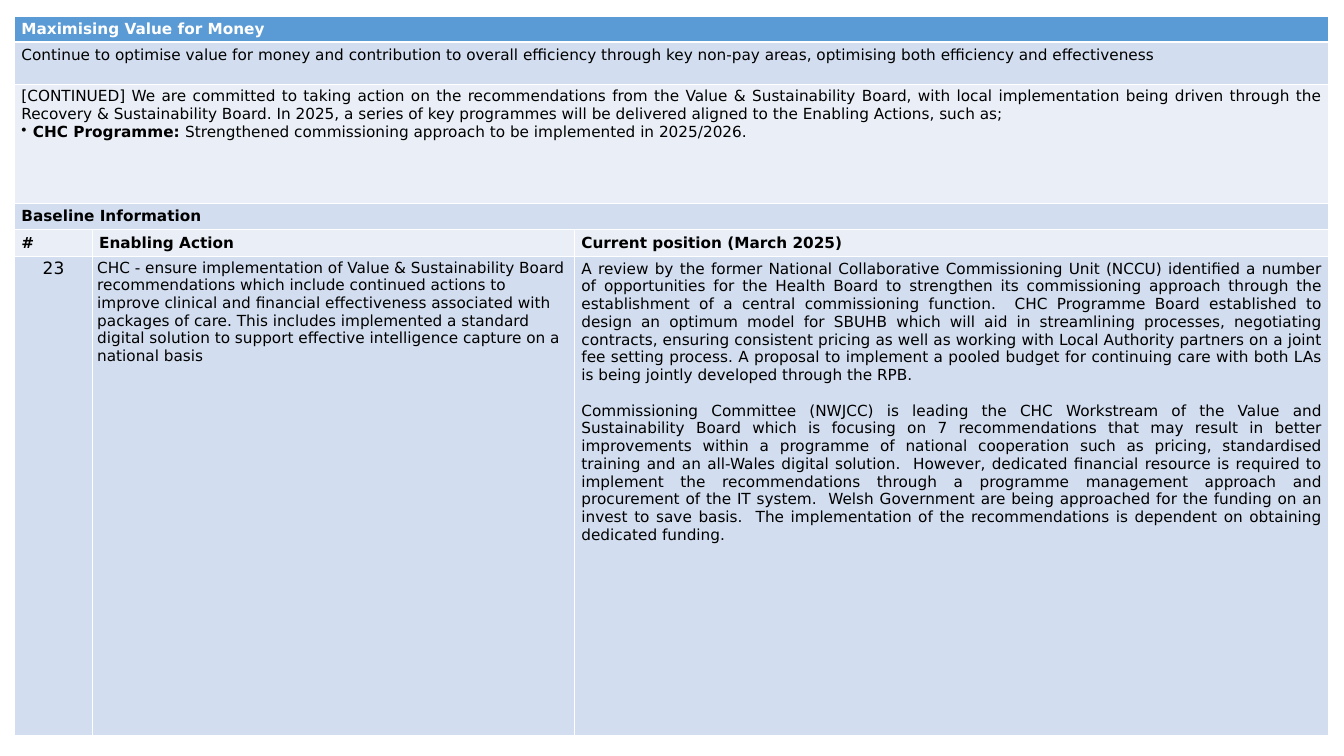
"""Builds the value for money slide, one table with a baseline section."""
from dataclasses import dataclass

import lxml.etree
import pptx
import pptx.dml.color
import pptx.enum.text
import pptx.oxml.ns
import pptx.table
import pptx.util

Cm = pptx.util.Cm
Pt = pptx.util.Pt
RGBColor = pptx.dml.color.RGBColor
ALIGN = pptx.enum.text.PP_ALIGN
ANCHOR = pptx.enum.text.MSO_ANCHOR

FONT = "DejaVu Sans"
WHITE = RGBColor(0xFF, 0xFF, 0xFF)
BLACK = RGBColor(0x00, 0x00, 0x00)
BLUE = RGBColor(0x5B, 0x9B, 0xD5)
MID = RGBColor(0xD2, 0xDE, 0xEF)
PALE = RGBColor(0xEA, 0xEF, 0xF7)

COLS = (3.23, 20.04, 31.34)
ROWS = (1.07, 1.73, 4.98, 1.07, 1.12, 19.89)
WIDE = (0.28, 0.15)
TIGHT = (0.2, 0.1)


@dataclass
class Para:
    text: str
    lead: str = ""
    align: ALIGN = ALIGN.JUSTIFY
    bold: bool = False
    size: int = 18
    gap: int = 0
    bullet: bool = False


@dataclass
class Box:
    paras: list[Para]
    fill: RGBColor
    ink: RGBColor = BLACK
    anchor: ANCHOR = ANCHOR.TOP
    inset: tuple[float, float] = WIDE


def label(text: str, fill: RGBColor, ink: RGBColor = BLACK) -> Box:
    return Box([Para(text, align=ALIGN.LEFT, bold=True)], fill, ink, ANCHOR.MIDDLE)


GRID = [
    [label("Maximising Value for Money", BLUE, WHITE)],
    [Box([Para("Continue to optimise value for money and contribution to overall efficiency "
               "through key non-pay areas, optimising both efficiency and effectiveness",
               align=ALIGN.LEFT)], MID)],
    [Box([Para("[CONTINUED] We are committed to taking action on the recommendations from the "
               "Value & Sustainability Board, with local implementation being driven through the "
               "Recovery & Sustainability Board. In 2025, a series of key programmes will be "
               "delivered aligned to the Enabling Actions, such as;"),
          Para("Strengthened commissioning approach to be implemented in 2025/2026.",
               lead="CHC Programme: ", align=ALIGN.LEFT, bullet=True)], PALE)],
    [label("Baseline Information", MID)],
    [label(text, PALE) for text in ("#", "Enabling Action", "Current position (March 2025)")],
    [Box([Para("23", align=ALIGN.CENTER, size=20)], MID, inset=TIGHT),
     Box([Para("CHC - ensure implementation of Value & Sustainability Board recommendations "
               "which include continued actions to improve clinical and financial effectiveness "
               "associated with packages of care. This includes implemented a standard digital "
               "solution to support effective intelligence capture on a national basis",
               align=ALIGN.LEFT)], MID, inset=TIGHT),
     Box([Para("A review by the former National Collaborative Commissioning Unit (NCCU) "
               "identified a number of opportunities for the Health Board to strengthen its "
               "commissioning approach through the establishment of a central commissioning "
               "function.  CHC Programme Board established to design an optimum model for SBUHB "
               "which will aid in streamlining processes, negotiating contracts, ensuring "
               "consistent pricing as well as working with Local Authority partners on a joint "
               "fee setting process. A proposal to implement a pooled budget for continuing care "
               "with both LAs is being jointly developed through the RPB."),
          Para("Commissioning Committee (NWJCC) is leading the CHC Workstream of the Value and "
               "Sustainability Board which is focusing on 7 recommendations that may result in "
               "better improvements within a programme of national cooperation such as pricing, "
               "standardised training and an all-Wales digital solution.  However, dedicated "
               "financial resource is required to implement the recommendations through a "
               "programme management approach and procurement of the IT system.  Welsh "
               "Government are being approached for the funding on an invest to save basis.  The "
               "implementation of the recommendations is dependent on obtaining dedicated "
               "funding.", gap=21)], MID)],
]


def add_node(root: lxml.etree._Element, tag: str, **attrs: str) -> lxml.etree._Element:
    return lxml.etree.SubElement(root, pptx.oxml.ns.qn(tag), attrs)


def paint(cell: pptx.table._Cell, fill: RGBColor, base: int) -> None:
    props = cell._tc.get_or_add_tcPr()
    for side, width in {"L": 1, "R": 1, "T": 1, "B": base}.items():
        line = add_node(props, f"a:ln{side}", w=str(Pt(width)))
        add_node(add_node(line, "a:solidFill"), "a:srgbClr", val=str(WHITE))
    cell.fill.solid()
    cell.fill.fore_color.rgb = fill


def write(cell: pptx.table._Cell, box: Box) -> None:
    side, edge = map(Cm, box.inset)
    form = {"vertical_anchor": box.anchor, "margin_left": side, "margin_right": side,
            "margin_top": edge, "margin_bottom": edge}
    for name, value in form.items():
        setattr(cell, name, value)
    frame = cell.text_frame
    for index, para in enumerate(box.paras):
        line = frame.add_paragraph() if index else frame.paragraphs[0]
        line.alignment = para.align
        if para.gap:
            line.space_before = Pt(para.gap)
        if para.bullet:
            props = line._p.get_or_add_pPr()
            props.set("marL", str(Cm(0.48)))
            props.set("indent", str(-Cm(0.48)))
            add_node(props, "a:buChar", char="•")
        for text, bold in ((para.lead, True), (para.text, para.bold)):
            if text:
                run = line.add_run()
                run.text = text
                for name, value in {"name": FONT, "size": Pt(para.size), "bold": bold}.items():
                    setattr(run.font, name, value)
                run.font.color.rgb = box.ink


def main() -> None:
    deck = pptx.Presentation()
    deck.slide_width, deck.slide_height = Cm(55.85), Cm(31.42)
    slide = deck.slides.add_slide(deck.slide_layouts[6])
    table = slide.shapes.add_table(len(ROWS), len(COLS), Cm(0.61), Cm(0.69),
                                   Cm(sum(COLS)), Cm(sum(ROWS))).table
    for col, width in zip(table.columns, COLS):
        col.width = Cm(width)
    for row, height in zip(table.rows, ROWS):
        row.height = Cm(height)
    for top, boxes in enumerate(GRID):
        for left in range(len(COLS)):
            paint(table.cell(top, left), boxes[0].fill, 1 if top else 3)
        if len(boxes) == 1:
            table.cell(top, 0).merge(table.cell(top, len(COLS) - 1))
        for left, box in enumerate(boxes):
            write(table.cell(top, left), box)
    deck.save("out.pptx")


if __name__ == "__main__":
    main()
